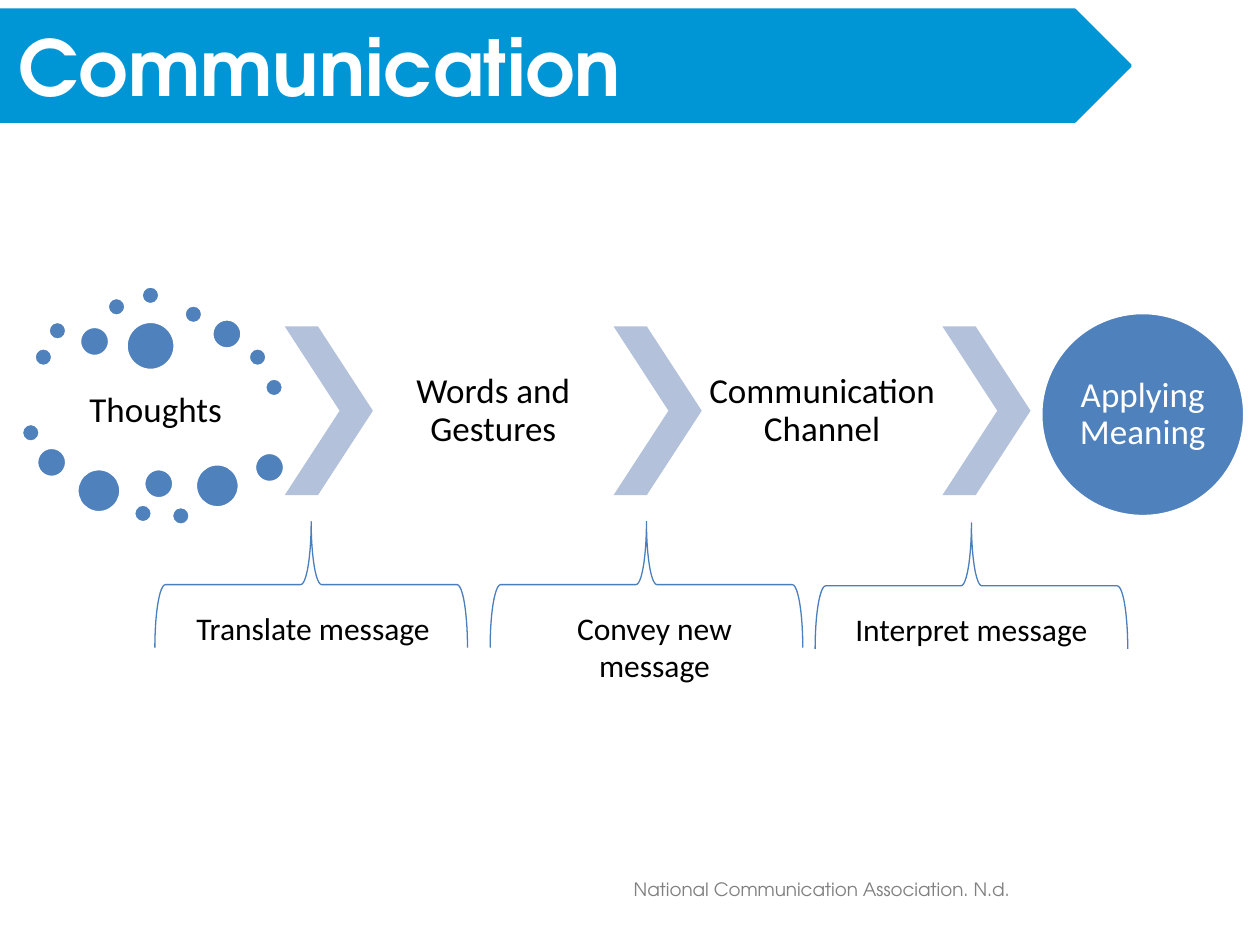
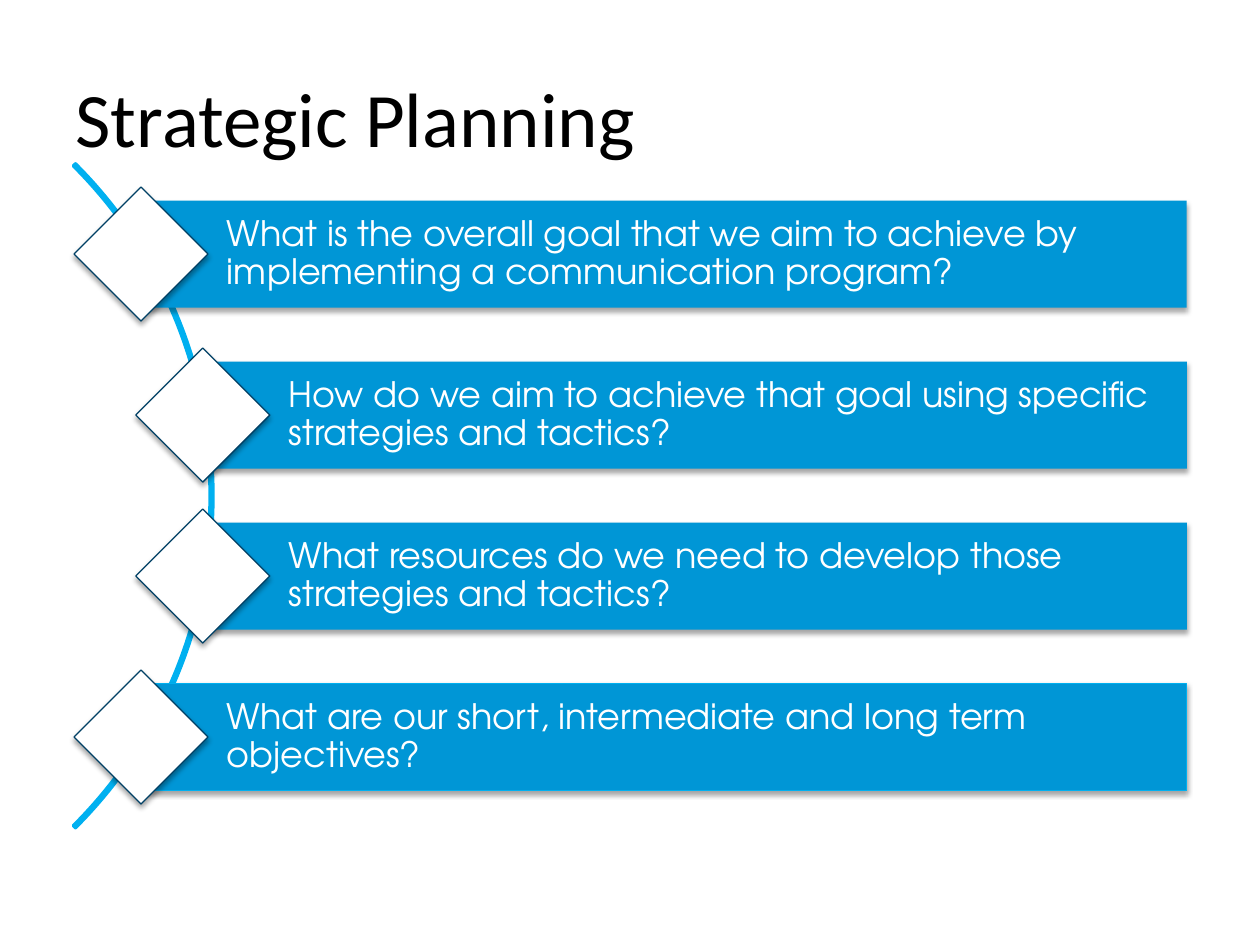
from lxml import etree
from pptx import Presentation
from pptx.dml.color import RGBColor
from pptx.enum.shapes import MSO_SHAPE
from pptx.enum.text import MSO_ANCHOR, MSO_AUTO_SIZE, PP_ALIGN
from pptx.oxml.ns import qn
from pptx.util import Pt

OVAL, RECT, DIAMOND = MSO_SHAPE.OVAL, MSO_SHAPE.RECTANGLE, MSO_SHAPE.DIAMOND
ARROW, CHEVRON = MSO_SHAPE.PENTAGON, MSO_SHAPE.CHEVRON
BRACE, ARC = MSO_SHAPE.LEFT_BRACE, MSO_SHAPE.BLOCK_ARC
LEFT, CENTER = PP_ALIGN.LEFT, PP_ALIGN.CENTER
TOP, MIDDLE = MSO_ANCHOR.TOP, MSO_ANCHOR.MIDDLE

WHITE = RGBColor(0xFF, 0xFF, 0xFF)
BLACK = RGBColor(0x00, 0x00, 0x00)
GRAY = RGBColor(0x80, 0x80, 0x80)
BLUE = RGBColor(0x00, 0x96, 0xD6)
SKY = RGBColor(0x00, 0xB0, 0xF0)
NAVY = RGBColor(0x00, 0x40, 0x65)
STEEL = RGBColor(0x4F, 0x81, 0xBD)
PALE = RGBColor(0xB3, 0xC1, 0xDB)
EDGE = RGBColor(0x4B, 0x7E, 0xBC)

SANS, GEO = "Calibri", "TeX Gyre Adventor"
INSET = (7.2, 3.6, 7.2, 3.6)
TIGHT = (2.2, 2.2, 2.2, 2.2)


def draw(slide, kind, box, fill=None, line=None, width=0.75, shade=False):
    """Add a preset shape; box is left, top, width, height in points."""
    shape = slide.shapes.add_shape(kind, *[Pt(v) for v in box])
    shape.shadow.inherit = False
    if fill is None:
        shape.fill.background()
    else:
        shape.fill.solid()
        shape.fill.fore_color.rgb = fill
    if line is None:
        shape.line.fill.background()
    else:
        shape.line.color.rgb = line
        shape.line.width = Pt(width)
    if shade:
        effects = shape._element.spPr.find(qn("a:effectLst"))
        outer = etree.SubElement(effects, qn("a:outerShdw"), blurRad=str(Pt(3.1)),
                                 dist=str(Pt(1.8)), dir="5400000", rotWithShape="0")
        tint = etree.SubElement(outer, qn("a:srgbClr"), val="000000")
        etree.SubElement(tint, qn("a:alpha"), val="35000")
    return shape


def write(shape, text, size, font, color, align=LEFT, anchor=MIDDLE,
          inset=INSET, space=None, bold=False):
    """Fill a shape, box or placeholder with one formatted paragraph."""
    frame = shape.text_frame
    frame.text = text
    frame.word_wrap = True
    frame.auto_size = MSO_AUTO_SIZE.NONE
    frame.vertical_anchor = anchor
    (frame.margin_left, frame.margin_top,
     frame.margin_right, frame.margin_bottom) = [Pt(v) for v in inset]
    para = frame.paragraphs[0]
    para.alignment = align
    if space:
        para.line_spacing = space
    para.font.size = Pt(size)
    para.font.name = font
    para.font.color.rgb = color
    para.font.bold = bold


deck = Presentation()
deck.slide_width, deck.slide_height = Pt(720), Pt(540)

# Slides with their titles
heads = [
    ("Communication", (3.6, -7.2, 498.2, 90), GEO, WHITE, True),
    ("Strategic Planning", (36, 21.6, 648, 90), SANS, BLACK, False),
]
for text, box, font, color, bold in heads:
    slide = deck.slides.add_slide(deck.slide_layouts[5])
    title = slide.shapes.title
    title.left, title.top, title.width, title.height = [Pt(v) for v in box]
    write(title, text, 44, font, color, bold=bold)
talk, plan = deck.slides

# Communication: banner behind the title
draw(talk, ARROW, (0, 5.8, 645.8, 63.4), BLUE, BLUE, 2)
talk.shapes._spTree.append(talk.shapes.title._element)

# Source line
note = talk.shapes.add_textbox(Pt(355), Pt(498.2), Pt(340.6), Pt(20.9))
write(note, "National Communication Association. N.d.", 10.5, GEO, GRAY, anchor=TOP)

# Cloud of dots around the thoughts: left, top, diameter
dots = [
    (19.4, 198.7, 10.8), (27.4, 183.6, 10.8), (45.4, 186.5, 17.3),
    (61.2, 169.9, 10.8), (80.6, 163.4, 10.8), (105.1, 174.2, 10.8),
    (121, 182.2, 17.3), (141.8, 198.7, 10.8), (151.2, 216, 10.8),
    (72, 183.6, 28.1), (12.2, 241.9, 10.8), (20.9, 255.6, 17.3),
    (43.9, 267.8, 25.2), (76.3, 288, 10.8), (82.1, 267.8, 17.3),
    (97.9, 289.4, 10.8), (111.6, 265, 25.2), (145.4, 258.5, 17.3),
]
for x, y, size in dots:
    draw(talk, OVAL, (x, y, size, size), STEEL, WHITE, 2)

# Steps with chevrons between them
STEP = 187.92
for i in range(3):
    mark = draw(talk, CHEVRON, (162.7 + i * STEP, 186.5, 50.4, 96.5), PALE)
    mark.adjustments[0] = 0.623
steps = [
    ("Thoughts", 20.2, 212.4, 45.4),
    ("Words and Gestures", 213.1, 186.5, 96.5),
    ("Communication Channel", 213.1 + STEP, 186.5, 96.5),
]
for text, x, y, high in steps:
    label = talk.shapes.add_textbox(Pt(x), Pt(y), Pt(137.5), Pt(high))
    write(label, text, 20, SANS, BLACK, CENTER, inset=TIGHT, space=0.9)
goal = draw(talk, OVAL, (594.7, 178.6, 116.6, 116.6), STEEL, WHITE, 2)
write(goal, "Applying Meaning", 20, SANS, WHITE, CENTER, inset=(0, 0, 0, 0), space=0.9)

# Braces and what happens between the steps
links = [
    ("Translate message", 105.1, 141.8, 244.8, LEFT),
    ("Convey new message", 295.9, 333.4, 244.8, CENTER),
    ("Interpret message", 481.7, 519.1, 245.5, LEFT),
]
for text, x, brace, y, align in links:
    label = talk.shapes.add_textbox(Pt(x), Pt(y + 99.4), Pt(156.2), Pt(51))
    write(label, text, 18, SANS, BLACK, align, TOP)
    draw(talk, BRACE, (brace, y, 72, 178.6), line=EDGE).rotation = 90

# Strategic Planning: arc, then question bars with diamonds
arc = draw(plan, ARC, (-414.7, 15.1, 536.4, 536.4), line=SKY, width=2)
for i, turn in enumerate((189, 27, 0.003)):
    arc.adjustments[i] = turn

asks = [
    ("What is the overall goal that we aim to achieve by implementing a "
     "communication program?", 80.6, None),
    ("How do we aim to achieve that goal using specific strategies and tactics?",
     115.9, None),
    ("What resources do we need to develop those strategies and tactics?",
     115.9, None),
    ("What are our short, intermediate and long term objectives?", 80.6, SKY),
]
SIDE = 76.6
for i, (text, x, line) in enumerate(asks):
    y = 114.6 + 92 * i
    bar = draw(plan, RECT, (x, y, 678.2 - x, 61.2), BLUE, line, shade=True)
    write(bar, text, 20, GEO, WHITE, inset=(49, 4.3, 4.3, 4.3), space=0.9)
    draw(plan, DIAMOND, (x - SIDE / 2, y + 30.6 - SIDE / 2, SIDE, SIDE),
         WHITE, NAVY, shade=True)
plan.shapes._spTree.append(plan.shapes.title._element)

deck.save("out.pptx")
